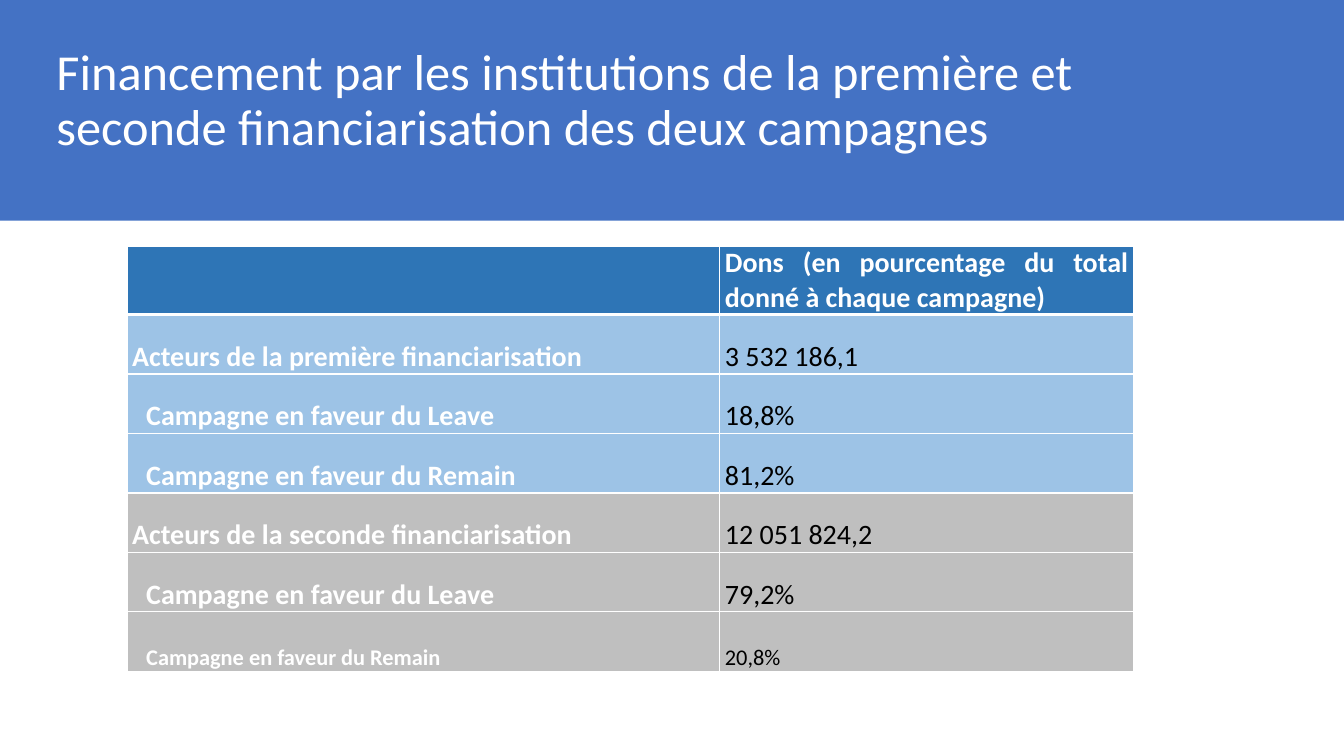
from lxml import etree
from pptx import Presentation
from pptx import util as u
from pptx.dml.color import RGBColor
from pptx.enum import shapes, text
from pptx.oxml import ns

WHITE = RGBColor(0xFF, 0xFF, 0xFF)
BLACK = RGBColor(0x00, 0x00, 0x00)
BAND_BLUE = RGBColor(0x44, 0x72, 0xC4)
HEADER_BLUE = RGBColor(0x2E, 0x75, 0xB6)
FIRST_BLUE = RGBColor(0x9D, 0xC3, 0xE6)
SECOND_GREY = RGBColor(0xBF, 0xBF, 0xBF)

FONT = "Calibri"
LEFT, JUSTIFY = text.PP_ALIGN.LEFT, text.PP_ALIGN.JUSTIFY

TITLE = ("Financement par les institutions de la première et "
         "seconde financiarisation des deux campagnes")
HEADER = "Dons (en pourcentage du total donné à chaque campagne)"
LEAVE = "Campagne en faveur du Leave"
REMAIN = "Campagne en faveur du Remain"

# Label, value, fill, whether the row is a campaign, text size
ROWS = [
    ("", HEADER, HEADER_BLUE, False, 20),
    ("Acteurs de la première financiarisation", "3 532 186,1", FIRST_BLUE, False, 20),
    (LEAVE, "18,8%", FIRST_BLUE, True, 20),
    (REMAIN, "81,2%", FIRST_BLUE, True, 20),
    ("Acteurs de la seconde financiarisation", "12 051 824,2", SECOND_GREY, False, 20),
    (LEAVE, "79,2%", SECOND_GREY, True, 20),
    (REMAIN, "20,8%", SECOND_GREY, True, 16),
]


def write(frame, words, size, color, bold=False, align=LEFT, indent=0, spacing=None):
    paragraph = frame.paragraphs[0]
    paragraph.text = words
    paragraph.alignment = align
    paragraph.line_spacing = spacing
    if indent:
        properties = paragraph._p.get_or_add_pPr()
        properties.set("marL", str(u.Inches(indent)))
        properties.set("indent", "0")
    # Without text, the paragraph's end mark carries the size
    font = paragraph.runs[0].font if words else paragraph.font
    font.name, font.size, font.bold = FONT, u.Pt(size), bold
    font.color.rgb = color


def set_borders(cell, top, bottom):
    properties = cell._tc.get_or_add_tcPr()
    for side, width in (("L", 1), ("R", 1), ("T", top), ("B", bottom)):
        line = etree.SubElement(properties, ns.qn(f"a:ln{side}"), w=str(u.Pt(width)))
        fill = etree.SubElement(line, ns.qn("a:solidFill"))
        etree.SubElement(fill, ns.qn("a:srgbClr"), val=str(WHITE))


def add_title_band(slide, left, top, width, height):
    band = slide.shapes.add_shape(
        shapes.MSO_SHAPE.RECTANGLE,
        u.Inches(left), u.Inches(top), u.Inches(width), u.Inches(height))
    band.shadow.inherit = False
    band.fill.solid()
    band.fill.fore_color.rgb = BAND_BLUE
    band.line.fill.background()

    # Title in front of the band
    title = slide.shapes.title
    title.element.addprevious(band.element)
    title.left, title.top = u.Inches(left + 0.46), u.Inches(top + 0.58)
    title.width, title.height = u.Inches(11.5), u.Inches(1.02)
    frame = title.text_frame
    frame.word_wrap = True
    frame.auto_size = text.MSO_AUTO_SIZE.NONE
    frame.vertical_anchor = text.MSO_ANCHOR.BOTTOM
    write(frame, TITLE, 36, WHITE, spacing=0.9)


def fill_cell(cell, words, fill, row_index, **text_format):
    set_borders(cell, top=3 if row_index == 1 else 1, bottom=3 if row_index == 0 else 1)
    cell.fill.solid()
    cell.fill.fore_color.rgb = fill
    cell.margin_left = cell.margin_right = u.Inches(0.05)
    cell.margin_top = cell.margin_bottom = 0
    cell.vertical_anchor = text.MSO_ANCHOR.BOTTOM
    write(cell.text_frame, words, **text_format)


def add_donations_table(slide, left, top, column_widths, row_height):
    frame = slide.shapes.add_table(
        len(ROWS), len(column_widths), u.Inches(left), u.Inches(top),
        u.Inches(sum(column_widths)), u.Inches(row_height * len(ROWS)))
    table = frame.table
    table.first_row = table.horz_banding = False
    for column, width in zip(table.columns, column_widths):
        column.width = u.Inches(width)

    for index, (label, value, fill, is_campaign, size) in enumerate(ROWS):
        table.rows[index].height = u.Inches(row_height)
        is_header = index == 0
        fill_cell(table.cell(index, 0), label, fill, index, size=size, color=WHITE,
                  bold=True, align=JUSTIFY if is_campaign else LEFT,
                  indent=0.14 if is_campaign else 0)
        fill_cell(table.cell(index, 1), value, fill, index, size=size,
                  color=WHITE if is_header else BLACK, bold=is_header, align=JUSTIFY)


def main():
    presentation = Presentation()
    presentation.slide_width = u.Inches(13.33)
    presentation.slide_height = u.Inches(7.5)
    slide = presentation.slides.add_slide(presentation.slide_layouts[5])
    add_title_band(slide, 0, 0, 13.33, 2.19)
    add_donations_table(slide, 1.26, 2.44, (5.88, 4.1), 0.59)
    presentation.save("out.pptx")


if __name__ == "__main__":
    main()
